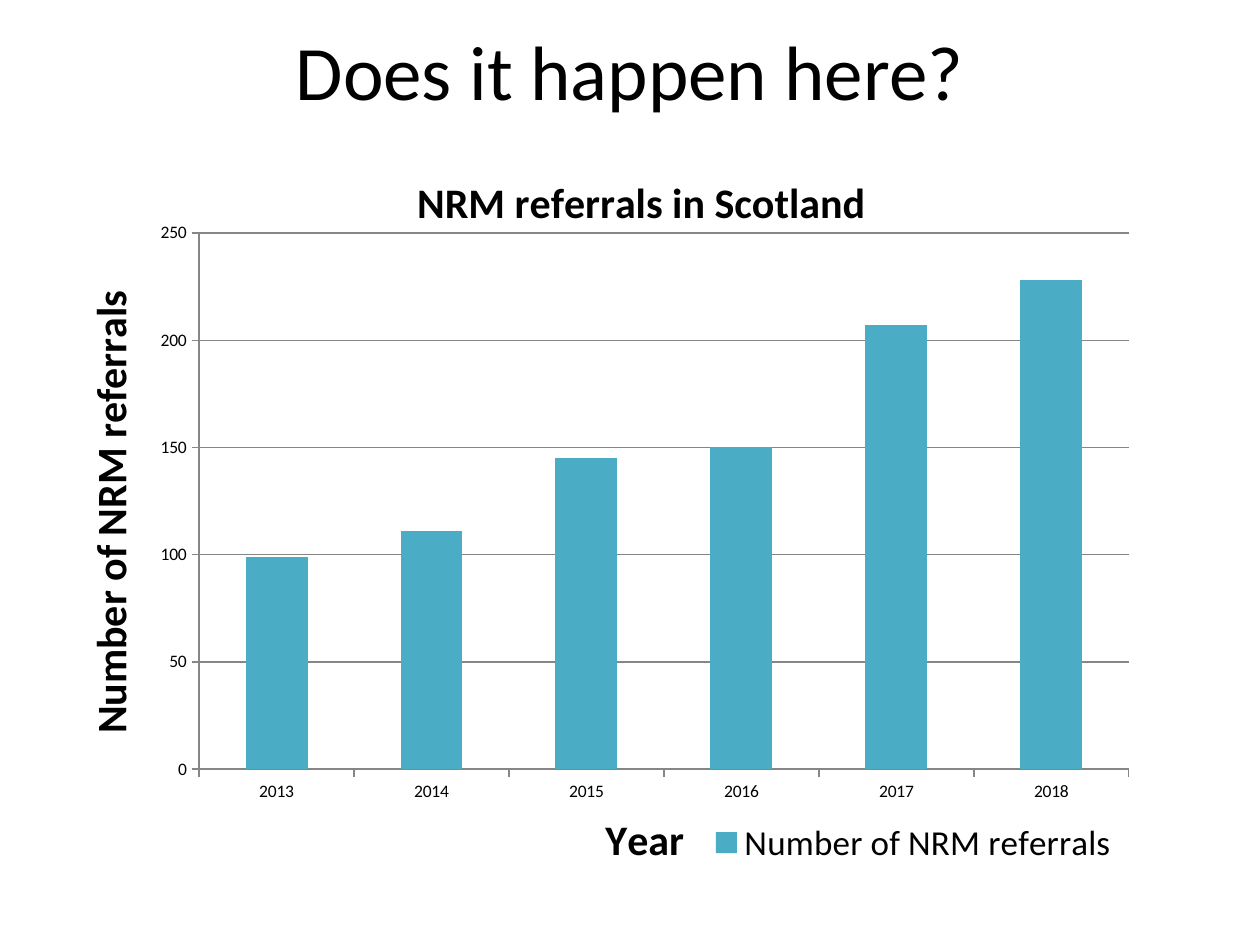
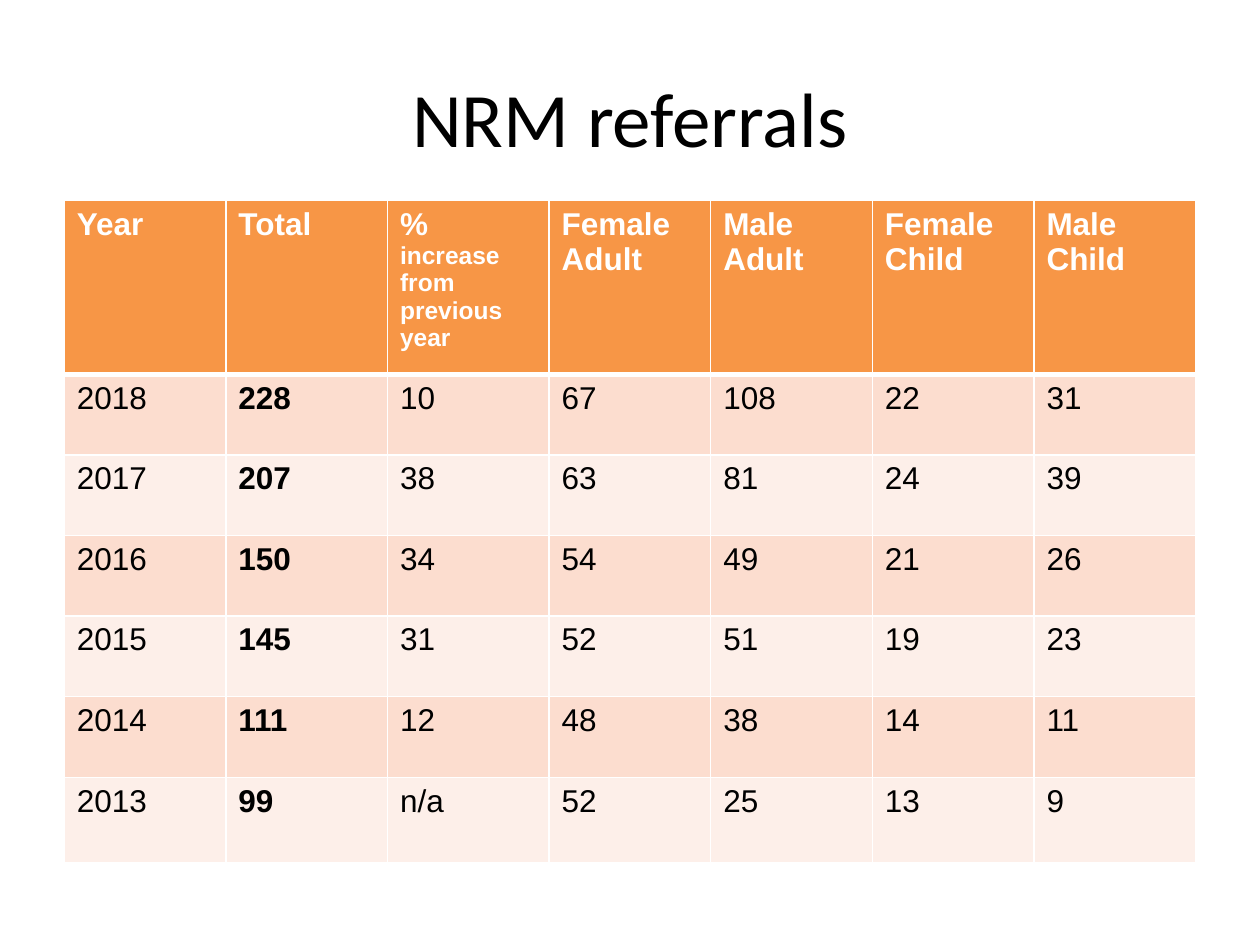
from lxml import etree
from pptx import Presentation
from pptx.chart.data import CategoryChartData
from pptx.dml.color import RGBColor
from pptx.enum.chart import XL_CHART_TYPE, XL_LEGEND_POSITION, XL_TICK_MARK
from pptx.enum.text import MSO_ANCHOR, PP_ALIGN
from pptx.oxml import parse_xml
from pptx.oxml.ns import nsdecls, qn
from pptx.util import Inches, Pt

BLACK = RGBColor(0x00, 0x00, 0x00)
WHITE = RGBColor(0xFF, 0xFF, 0xFF)
GREY = RGBColor(0x86, 0x86, 0x86)
TEAL = RGBColor(0x4B, 0xAC, 0xC6)
ORANGE = RGBColor(0xF7, 0x96, 0x46)
BANDS = (RGBColor(0xFC, 0xDD, 0xCF), RGBColor(0xFD, 0xEF, 0xE9))

COLUMN = XL_CHART_TYPE.COLUMN_CLUSTERED
RIGHT = XL_LEGEND_POSITION.RIGHT
OUT = XL_TICK_MARK.OUTSIDE
MIDDLE = MSO_ANCHOR.MIDDLE
CENTER = PP_ALIGN.CENTER

HEAD_FONT, CELL_FONT = "Calibri", "Arial"
HEADS = ["Year", "Total", "% ", "Female\nAdult", "Male\nAdult",
         "Female\nChild", "Male\nChild"]
GROWTH = "increase from previous year"
ROWS = [
    ["2018", "228", "10", "67", "108", "22", "31"],
    ["2017", "207", "38", "63", "81", "24", "39"],
    ["2016", "150", "34", "54", "49", "21", "26"],
    ["2015", "145", "31", "52", "51", "19", "23"],
    ["2014", "111", "12", "48", "38", "14", "11"],
    ["2013", "99", "n/a", "52", "25", "13", "9"],
]


def set_font(font, name, size, color=BLACK, bold=False):
    font.name, font.size, font.bold = name, Pt(size), bold
    font.color.rgb = color


def add_title(slide, text, box):
    frame = slide.shapes.add_textbox(*map(Inches, box)).text_frame
    frame.word_wrap = True
    frame.vertical_anchor = MIDDLE
    frame.text = text
    para = frame.paragraphs[0]
    para.alignment = CENTER
    set_font(para.runs[0].font, HEAD_FONT, 44)


def name_part(part, text):
    """Give the chart or one of its axes a bold title."""
    part.has_title = True
    frame = (part.chart_title if hasattr(part, "chart_title")
             else part.axis_title).text_frame
    frame.text = text
    set_font(frame.paragraphs[0].runs[0].font, HEAD_FONT, 24, bold=True)


def set_layout(parent, box, inner=False):
    """Place a chart part by fractions of the chart's box."""
    target = '<c:layoutTarget val="inner"/>' if inner else ""
    modes = "".join(f'<c:{k}Mode val="edge"/>' for k in "xy")
    sizes = "".join(f'<c:{k} val="{v}"/>' for k, v in zip("xywh", box))
    layout = parse_xml(f'<c:layout {nsdecls("c")}><c:manualLayout>{target}'
                       f'{modes}{sizes}</c:manualLayout></c:layout>')
    old = parent.find(qn("c:layout"))
    if old is not None:
        parent.remove(old)
    # A legend's layout follows its position; a plot's comes first
    place = parent.find(qn("c:legendPos"))
    if place is None:
        parent.insert(0, layout)
    else:
        place.addnext(layout)


def add_bars(slide, box):
    years = ROWS[::-1]
    label = "Number of NRM referrals"
    data = CategoryChartData()
    data.categories = [row[0] for row in years]
    data.add_series(label, [int(row[1]) for row in years])
    chart = slide.shapes.add_chart(COLUMN, *map(Inches, box), data).chart
    set_font(chart.font, HEAD_FONT, 10)
    name_part(chart, "NRM referrals in Scotland")

    # Axes
    year, count = chart.category_axis, chart.value_axis
    for axis, text in ((year, "Year"), (count, label)):
        name_part(axis, text)
        axis.major_tick_mark = OUT
        axis.format.line.color.rgb = GREY
    count.minimum_scale, count.maximum_scale = 0, 250
    count.major_unit = 50
    count.has_major_gridlines = True
    count.major_gridlines.format.line.color.rgb = GREY

    # Bars
    plot = chart.plots[0]
    plot.gap_width = 150
    plot.vary_by_categories = False
    fill = plot.series[0].format.fill
    fill.solid()
    fill.fore_color.rgb = TEAL

    # Legend and plot area
    chart.has_legend = True
    legend = chart.legend
    legend.position = RIGHT
    legend.include_in_layout = False
    set_font(legend.font, HEAD_FONT, 20)
    area = plot.series[0].format.fill and chart.element.find(
        ".//" + qn("c:plotArea"))
    set_layout(area, (0.11, 0.12, 0.82, 0.73), inner=True)
    set_layout(chart.element.find(".//" + qn("c:legend")),
               (0.55, 0.91, 0.38, 0.08))


def set_edges(cell, base):
    """Draw white cell borders; base is the weight of the lower one."""
    props = cell._tc.get_or_add_tcPr()
    for side, width in zip("LRTB", (1, 1, 1, base)):
        line = etree.SubElement(props, qn(f"a:ln{side}"), w=str(Pt(width)))
        solid = etree.SubElement(line, qn("a:solidFill"))
        etree.SubElement(solid, qn("a:srgbClr"), val=str(WHITE))


def fill_cell(cell, text, back, color, bold, base=1):
    set_edges(cell, base)
    cell.fill.solid()
    cell.fill.fore_color.rgb = back
    cell.text_frame.text = text
    for para in cell.text_frame.paragraphs:
        set_font(para.runs[0].font, CELL_FONT, 18, color, bold)


def add_grid(slide, box):
    table = slide.shapes.add_table(len(ROWS) + 1, len(HEADS),
                                   *map(Inches, box)).table
    for col in table.columns:
        col.width = Inches(box[2] / len(HEADS))
    for row, high in zip(table.rows, [1.38] + [0.64] * 5 + [0.68]):
        row.height = Inches(high)

    # Header row
    for c, text in enumerate(HEADS):
        fill_cell(table.cell(0, c), text, ORANGE, WHITE, True, base=3)
    run = table.cell(0, 2).text_frame.paragraphs[0].add_run()
    run.text = GROWTH
    set_font(run.font, CELL_FONT, 14, WHITE, True)

    # Banded rows with bold totals
    for r, row in enumerate(ROWS):
        for c, text in enumerate(row):
            fill_cell(table.cell(r + 1, c), text, BANDS[r % 2], BLACK, c == 1)


def main():
    deck = Presentation()
    deck.slide_width, deck.slide_height = Inches(10), Inches(7.5)
    blank = deck.slide_layouts[6]

    slide = deck.slides.add_slide(blank)
    add_title(slide, "Does it happen here?", (0.5, 0.13, 9, 0.85))
    add_bars(slide, (0.59, 1.15, 9, 5.83))

    slide = deck.slides.add_slide(blank)
    add_title(slide, "NRM referrals", (0.5, 0.3, 9, 1.25))
    add_grid(slide, (0.51, 1.59, 8.98, 5.26))

    deck.save("out.pptx")


if __name__ == "__main__":
    main()
